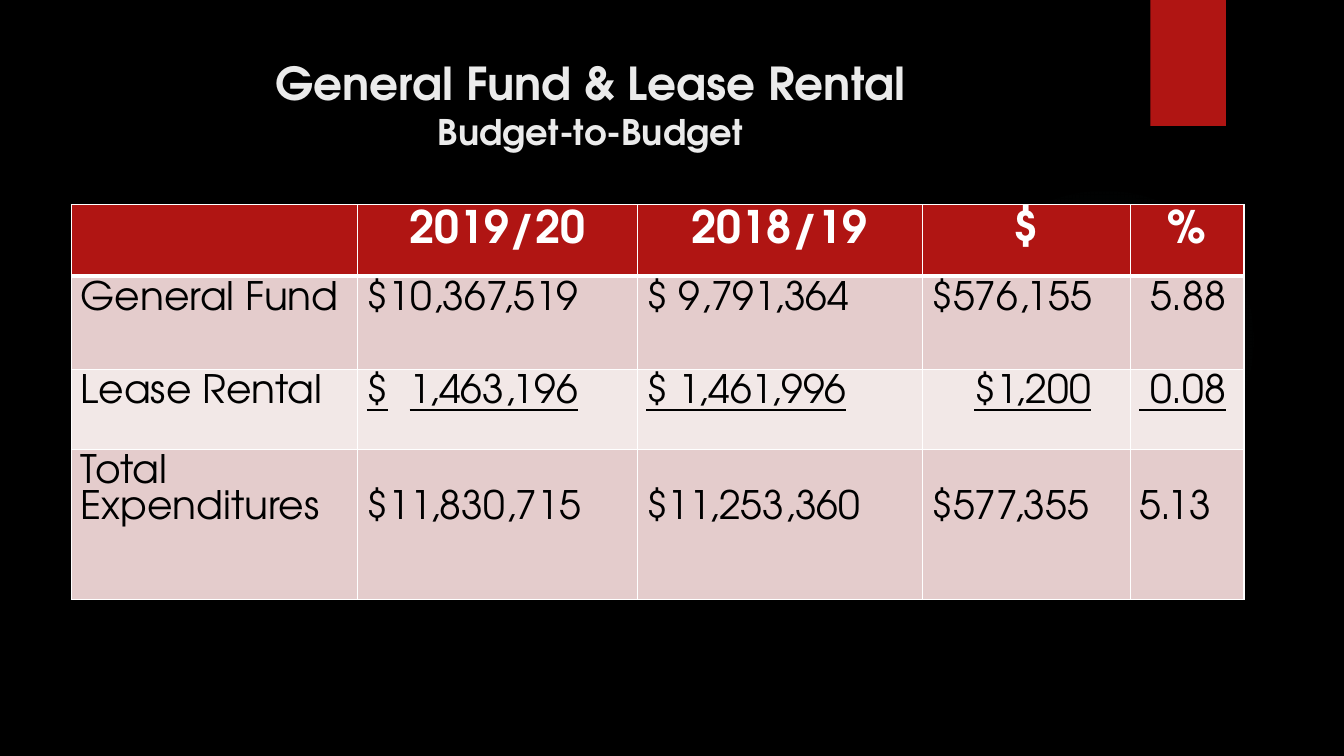
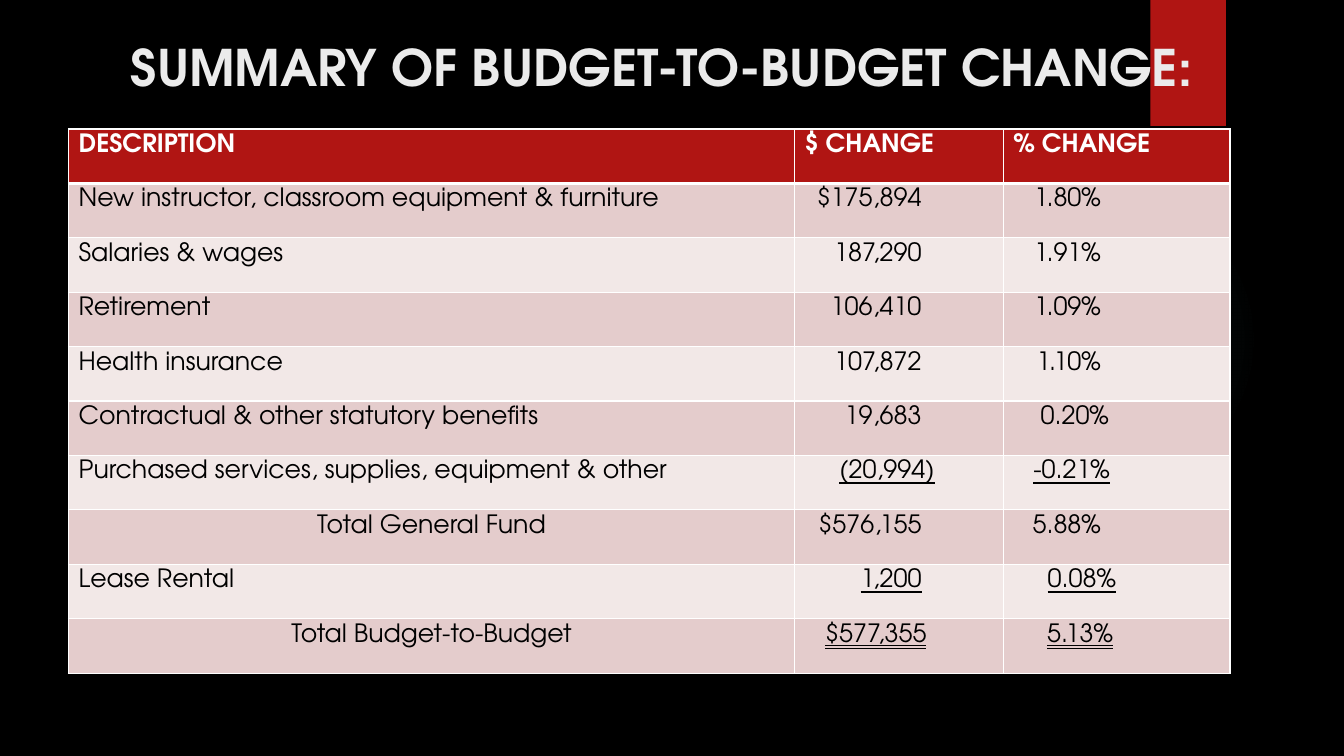
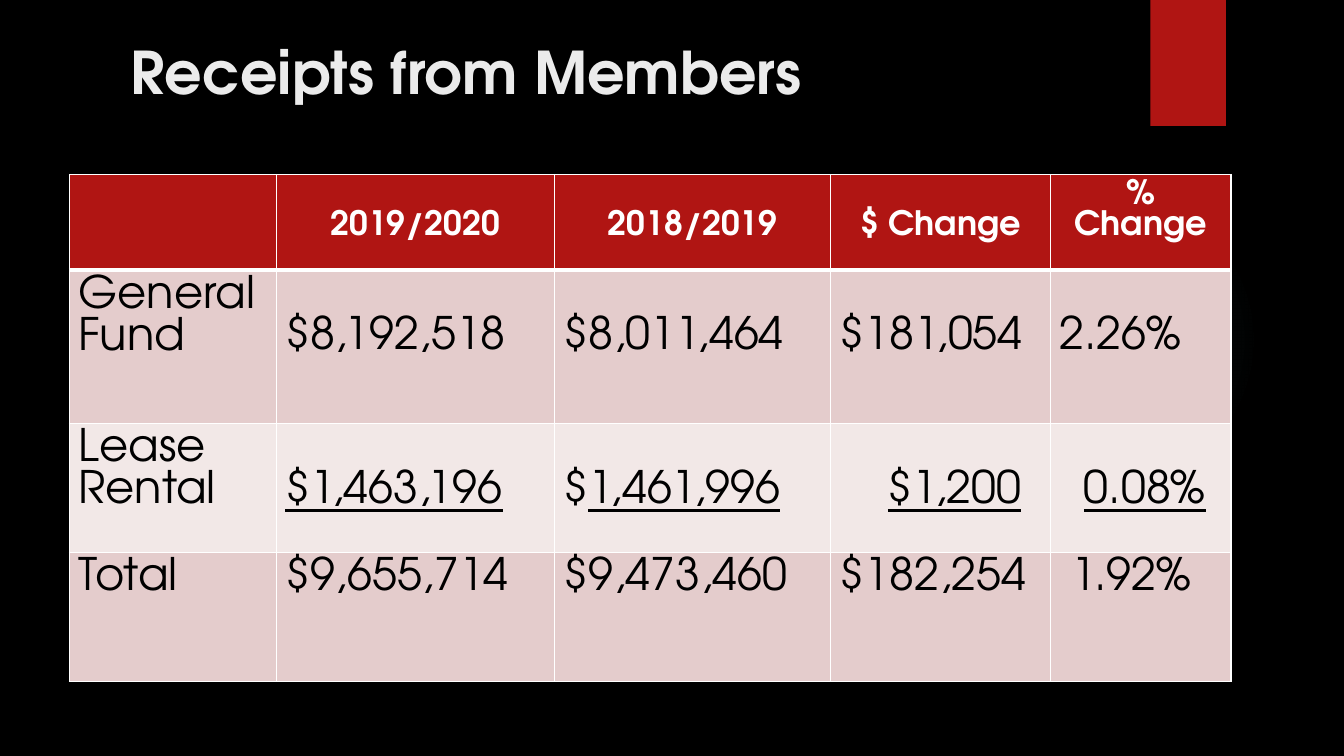
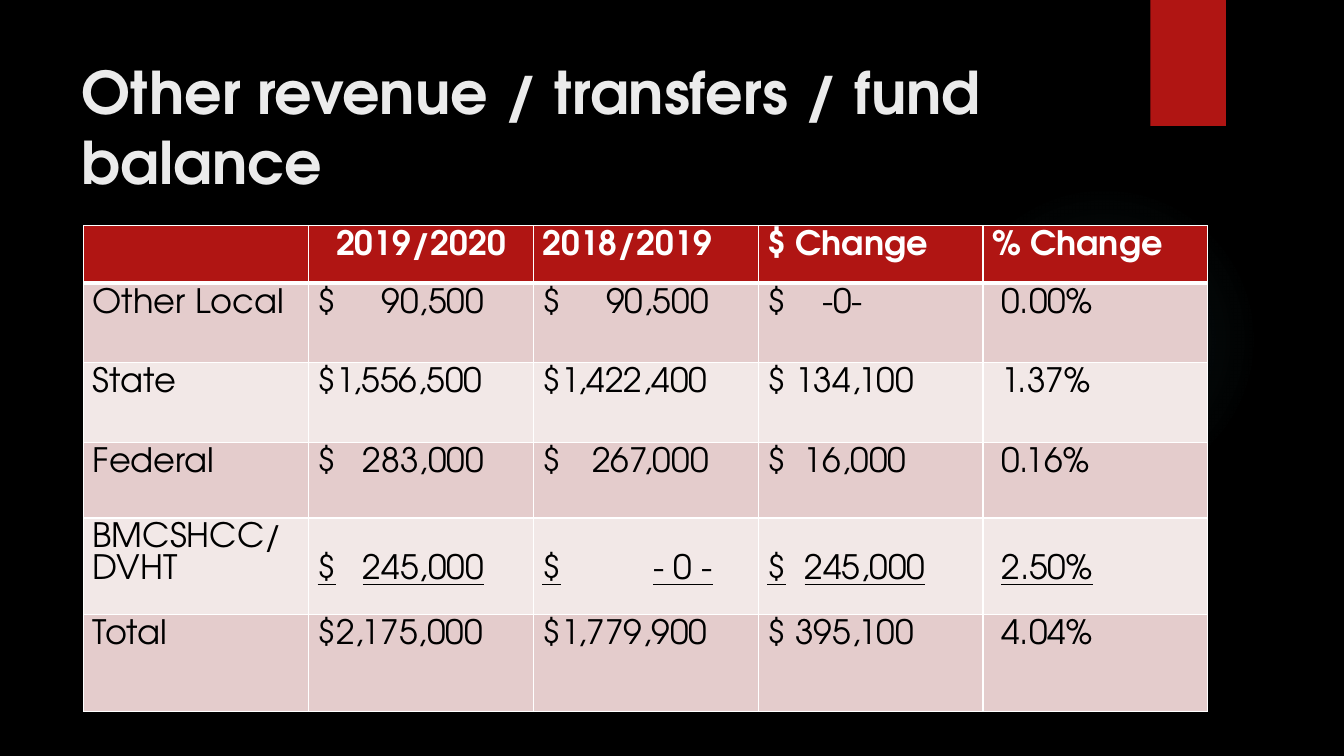
from collections.abc import Iterable
from dataclasses import dataclass, field
from typing import Any

from lxml.etree import SubElement
from pptx import Presentation
from pptx.dml.color import RGBColor
from pptx.enum.shapes import MSO_SHAPE as Shape
from pptx.enum.text import MSO_ANCHOR as Anchor
from pptx.enum.text import MSO_TEXT_UNDERLINE_TYPE as Underline
from pptx.enum.text import PP_ALIGN as Align
from pptx.oxml import parse_xml
from pptx.oxml.ns import nsdecls, qn
from pptx.util import Inches, Pt


@dataclass(frozen=True)
class Theme:
    font: str = "TeX Gyre Adventor"
    background: str = "000000"
    accent: str = "B01513"
    glow: str = "50B9C1"
    title: str = "EBEBEB"
    header_text: str = "FFFFFF"
    body_text: str = "000000"
    border: str = "FFFFFF"
    bands: tuple[str, str] = ("E4CCCC", "F2E8E7")
    border_width: float = 1
    header_rule: float = 3
    title_large: float = 42
    title_medium: float = 36
    title_small: float = 32.4
    subtitle: float = 25.2
    line_ratio: float = 0.93
    cell_top: float = 0.05


THEME = Theme()


@dataclass(frozen=True)
class Line:
    text: str
    size: float


@dataclass(frozen=True)
class Title:
    left: float
    top: float
    width: float
    height: float
    lines: tuple[Line, ...]
    align: Align = Align.LEFT


@dataclass(frozen=True)
class Cell:
    """Text between underscores is underlined; tabs are right-aligned stops in inches."""
    text: str
    tabs: tuple[float, ...] = ()
    align: Align | None = None
    underline: Underline = Underline.SINGLE_LINE


@dataclass(frozen=True)
class Column:
    width: float
    tab: float = 0


@dataclass(frozen=True)
class Row:
    """Columns in lowered start one line further down."""
    height: float
    cells: tuple[str | Cell, ...]
    lowered: Iterable[int] = ()
    align: Align = Align.LEFT


@dataclass(frozen=True)
class Grid:
    left: float
    top: float
    header_size: float
    body_size: float
    columns: tuple[Column, ...]
    rows: tuple[Row, ...] = field(default=())
    side_margin: float = 0.09


def apply_format(target: Any, values: dict[str, Any]) -> None:
    for name, value in values.items():
        setattr(target, name, value)


def font_format(size: float, color: str, bold: bool) -> dict[str, Any]:
    return {"name": THEME.font, "size": Pt(size), "bold": bold, "color.rgb": color}


def add_span(para: Any, text: str, size: float, color: str, bold: bool,
             underline: Underline | None = None) -> None:
    span = para.add_run()
    span.text = text
    apply_format(span.font, {"name": THEME.font, "size": Pt(size), "bold": bold,
                             "underline": underline})
    span.font.color.rgb = RGBColor.from_string(color)


def add_backdrop(page: Any) -> None:
    """Draw the faint glow and the red ribbon behind the content."""
    glow = page.shapes.add_shape(Shape.OVAL, Inches(9.41), Inches(1.83), Inches(3.08), Inches(3.08))
    ribbon = page.shapes.add_shape(Shape.RECTANGLE, Inches(11.41), 0, Inches(0.75), Inches(1.25))
    for shape in (glow, ribbon):
        shape.shadow.inherit = False
        shape.line.fill.background()
    ribbon.fill.solid()
    ribbon.fill.fore_color.rgb = RGBColor.from_string(THEME.accent)
    stops = "".join(
        f'<a:gs pos="{position * 1000}"><a:srgbClr val="{THEME.glow}">'
        f'<a:alpha val="{alpha * 1000}"/></a:srgbClr></a:gs>'
        for position, alpha in ((0, 7), (36, 6), (69, 0)))
    gradient = parse_xml(
        f'<a:gradFill {nsdecls("a")} rotWithShape="1"><a:gsLst>{stops}</a:gsLst><a:path path="circle">'
        '<a:fillToRect l="50000" t="50000" r="50000" b="50000"/></a:path></a:gradFill>')
    glow._element.spPr.find(qn("a:prstGeom")).addnext(gradient)


def add_title(page: Any, title: Title) -> None:
    box = page.shapes.add_textbox(*map(Inches, (title.left, title.top, title.width, title.height)))
    frame = box.text_frame
    apply_format(frame, {"word_wrap": True, "vertical_anchor": Anchor.TOP})
    for index, line in enumerate(title.lines):
        para = frame.add_paragraph() if index else frame.paragraphs[0]
        para.alignment = title.align
        add_span(para, line.text, line.size, THEME.title, True)


def add_borders(cell: Any, top: float, bottom: float) -> None:
    properties = cell._tc.get_or_add_tcPr()
    widths = {"lnL": THEME.border_width, "lnR": THEME.border_width, "lnT": top, "lnB": bottom}
    for side, width in widths.items():
        line = SubElement(properties, qn(f"a:{side}"), w=str(Pt(width)))
        fill = SubElement(line, qn("a:solidFill"))
        SubElement(fill, qn("a:srgbClr"), val=THEME.border)


def add_tabs(para: Any, stops: tuple[float, ...]) -> None:
    tab_list = SubElement(para._p.get_or_add_pPr(), qn("a:tabLst"))
    for stop in stops:
        SubElement(tab_list, qn("a:tab"), pos=str(Inches(stop)), algn="r")


def fill_cell(target: Any, content: Cell, size: float, color: str, bold: bool, align: Align) -> None:
    para = target.text_frame.paragraphs[0]
    if "\t" in content.text:
        add_tabs(para, content.tabs)
    apply_format(para, {"alignment": content.align or align,
                        "line_spacing": Pt(round(size * THEME.line_ratio, 1))})
    for index, part in enumerate(content.text.split("_")):
        if part:
            add_span(para, part, size, color, bold, content.underline if index % 2 else None)


def add_grid(page: Any, grid: Grid) -> None:
    width = sum(column.width for column in grid.columns)
    height = sum(row.height for row in grid.rows)
    frame = page.shapes.add_table(len(grid.rows), len(grid.columns),
                                  *map(Inches, (grid.left, grid.top, width, height)))
    table = frame.table
    apply_format(table, {"first_row": False, "horz_banding": False})
    for index, column in enumerate(grid.columns):
        table.columns[index].width = Inches(column.width)
    for row_index, row in enumerate(grid.rows):
        table.rows[row_index].height = Inches(row.height)
        header = row_index == 0
        size = grid.header_size if header else grid.body_size
        color = THEME.header_text if header else THEME.body_text
        band = THEME.accent if header else THEME.bands[(row_index - 1) % 2]
        above = THEME.header_rule if row_index == 1 else THEME.border_width
        below = THEME.header_rule if header else THEME.border_width
        for index, content in enumerate(row.cells):
            if isinstance(content, str):
                content = Cell(content, (grid.columns[index].tab,))
            target = table.cell(row_index, index)
            drop = size * THEME.line_ratio / 72 if index in row.lowered else 0
            apply_format(target, {
                "margin_left": Inches(grid.side_margin), "margin_right": Inches(grid.side_margin),
                "margin_top": Inches(THEME.cell_top + drop), "margin_bottom": Inches(0.05),
                "vertical_anchor": Anchor.TOP})
            add_borders(target, above, below)
            target.fill.solid()
            target.fill.fore_color.rgb = RGBColor.from_string(band)
            fill_cell(target, content, size, color, header, row.align)


VALUES = range(1, 5)
DOUBLE = Underline.DOUBLE_LINE

PAGES: tuple[tuple[Title, Grid], ...] = (
    (
        Title(0.71, 0.5, 10.29, 1.53,
              (Line("General Fund & Lease Rental", THEME.title_small),
               Line("Budget-to-Budget", THEME.subtitle)), Align.CENTER),
        Grid(0.71, 2.03, 32, 28,
             (Column(2.84), Column(2.77, 2.09), Column(2.83), Column(2.06, 1.58), Column(1.13)), (
                 Row(0.71, ("", "2019/20", "2018/19", "$", "%"), align=Align.CENTER),
                 Row(0.93, ("General Fund", "$10,367,519", "$ 9,791,364", "$576,155", " 5.88")),
                 Row(0.79, ("Lease Rental", "_$\t1,463,196", "_$ 1,461,996", "_\t$1,200", "_ 0.08")),
                 Row(1.49, ("Total Expenditures", "$11,830,715", "$11,253,360", "$577,355", "5.13"),
                     VALUES),
             )),
    ),
    (
        Title(1.2, 0.31, 11, 0.96,
              (Line("SUMMARY OF BUDGET-TO-BUDGET CHANGE:", THEME.title_medium),)),
        Grid(0.68, 1.28, 18, 18, (Column(7.2), Column(2.07, 1.16), Column(2.25, 0.87)), tuple(
            Row(0.54, cells) for cells in (
                ("DESCRIPTION", "$ CHANGE", "% CHANGE"),
                ("New instructor, classroom equipment & furniture", "\t$175,894", "\t1.80%"),
                ("Salaries & wages", "\t187,290", "\t1.91%"),
                ("Retirement", "\t106,410", "\t1.09%"),
                ("Health insurance", "\t107,872", "\t1.10%"),
                ("Contractual & other statutory benefits", "\t19,683", Cell("\t0.20%", (0.95,))),
                ("Purchased services, supplies, equipment & other",
                 Cell("_\t(20,994)", (1.29,)), Cell("_\t-0.21%", (0.96,))),
                (Cell("Total General Fund", align=Align.CENTER), "\t$576,155", "\t5.88%"),
                ("Lease Rental", "_\t1,200", Cell("_\t0.08%\t", (1.02, 1.16))),
                (Cell("Total Budget-to-Budget", align=Align.CENTER),
                 Cell("_\t$577,355", (1.21,), underline=DOUBLE),
                 Cell("\t_\t5.13%", (0.14, 0.99), underline=DOUBLE)),
            )), side_margin=0.1),
    ),
    (
        Title(1.2, 0.31, 11, 1.2, (Line("Receipts from Members", THEME.title_large),)),
        Grid(0.69, 1.73, 24, 32,
             (Column(2.05), Column(2.76), Column(2.74), Column(2.18, 1.8), Column(1.79, 1.45)), (
                 Row(0.95, ("", "2019/2020", "2018/2019", "$ Change", "% Change"),
                     range(1, 4), Align.CENTER),
                 Row(1.52, ("General Fund", "$8,192,518", "$8,011,464", "$181,054", "2.26%"), VALUES),
                 Row(1.28, ("Lease Rental", "_$1,463,196", "$_1,461,996", "_\t$1,200", "_\t0.08%"),
                     VALUES),
                 Row(1.28, ("Total", "$9,655,714", "$9,473,460", "$182,254", " 1.92%")),
             )),
    ),
    (
        Title(0.71, 0.5, 10.29, 1.53,
              (Line("Other revenue / transfers / fund balance", THEME.title_large),)),
        Grid(0.83, 2.24, 24, 24,
             (Column(2.23), Column(2.23, 1.65), Column(2.23, 1.65), Column(2.23, 1.38), Column(2.23)), (
                 Row(0.57, ("", Cell("2019/2020", align=Align.CENTER), "2018/2019",
                            "$ Change", "% Change")),
                 Row(0.79, ("Other Local", "$\t90,500", "$\t90,500", Cell("$\t-0-", (0.95,)), " 0.00%")),
                 Row(0.79, ("State", "$1,556,500", "$1,422,400", "$ 134,100", " 1.37%")),
                 Row(0.75, ("Federal", "$\t283,000", "$\t267,000", "$\t16,000", " 0.16%")),
                 Row(0.96, ("BMCSHCC/DVHT", Cell("_$\t245,000\t", (1.65, 1.75)),
                            Cell("_$\t- 0 -\t", (1.69, 1.79)), Cell("_$\t245,000", (1.57,)),
                            " _2.50%"), VALUES),
                 Row(0.96, ("Total", "$2,175,000", "$1,779,900", "$ 395,100", " 4.04%")),
             )),
    ),
)


def main() -> None:
    deck = Presentation()
    apply_format(deck, {"slide_width": Inches(13.33), "slide_height": Inches(7.5)})
    background = deck.slide_master.background.fill
    background.solid()
    background.fore_color.rgb = RGBColor.from_string(THEME.background)
    for title, grid in PAGES:
        page = deck.slides.add_slide(deck.slide_layouts[6])
        add_backdrop(page)
        add_title(page, title)
        add_grid(page, grid)
    deck.save("out.pptx")


if __name__ == "__main__":
    main()
